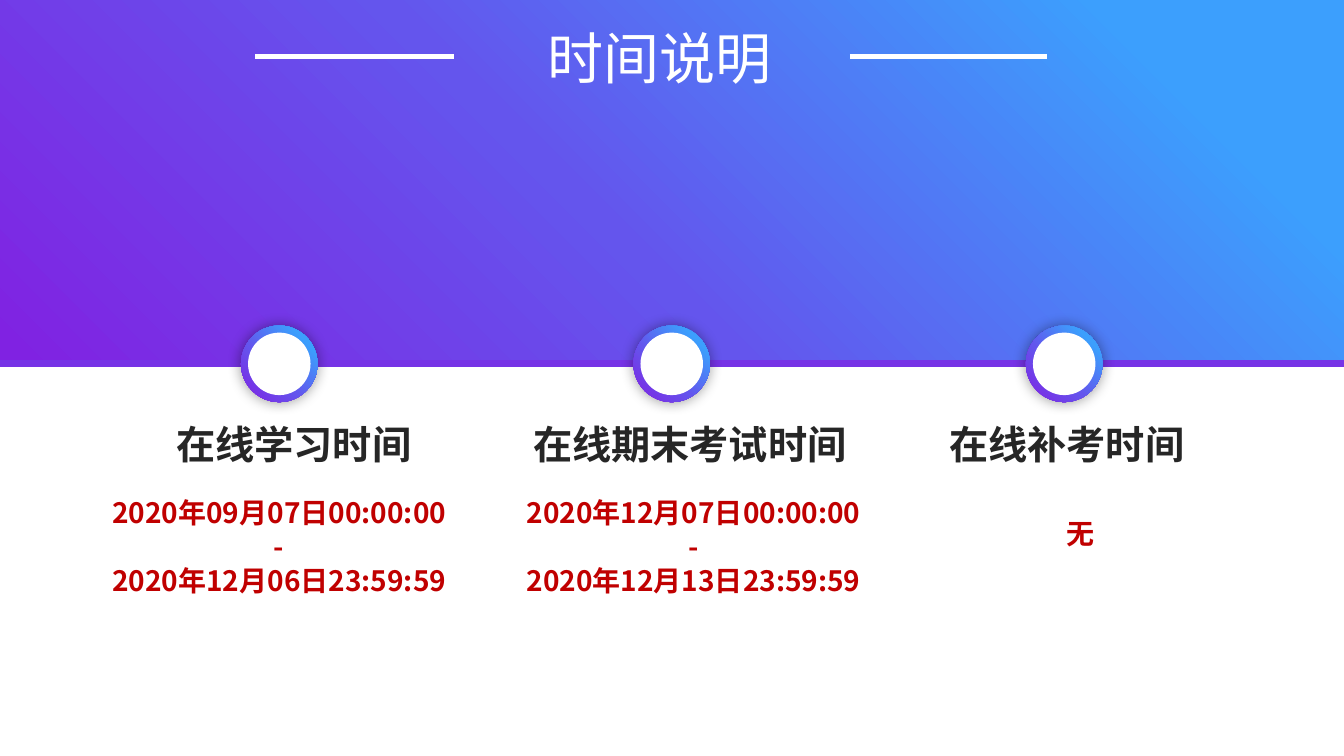
from copy import deepcopy

from lxml import etree
from pptx import Presentation
from pptx.dml.color import RGBColor
from pptx.enum.shapes import MSO_CONNECTOR, MSO_SHAPE
from pptx.enum.text import MSO_AUTO_SIZE, PP_ALIGN
from pptx.oxml.ns import qn
from pptx.util import Inches, Pt

RECTANGLE, OVAL = MSO_SHAPE.RECTANGLE, MSO_SHAPE.OVAL
STRAIGHT = MSO_CONNECTOR.STRAIGHT
GROW = MSO_AUTO_SIZE.SHAPE_TO_FIT_TEXT
LEFT, CENTER = PP_ALIGN.LEFT, PP_ALIGN.CENTER

WIDTH, HEIGHT = Inches(13.333), Inches(7.5)
FONT = "Noto Sans CJK SC"
WHITE, DARK, RED, PURPLE = "FFFFFF", "262626", "C00000", "7633E6"
GRADIENT = [(0.01, "8022E2"), (0.42, "6455ED"), (0.82, "3C9FFD")]
TIMELINE_Y = 48.13
FIRST_MARKER_X, MARKER_STEP = 20.78, 29.2
RING_SIZE, CORE_SIZE = 5.7, 4.65

PERIODS = [
    ("在线学习时间", 12.38, 19.35, 6.3, 64.93, 14.8,
     ["2020年09月07日00:00:00", "-", "2020年12月06日23:59:59"]),
    ("在线期末考试时间", 38.93, 25.35, 37.13, 64.93, 14.8,
     ["2020年12月07日00:00:00", "-", "2020年12月13日23:59:59"]),
    ("在线补考时间", 69.9, 20.93, 65.93, 67.73, 5.87, ["无"]),
]


def color(value):
    return RGBColor.from_string(value)


def across(percent):
    return round(WIDTH * percent / 100)


def down(percent):
    return round(HEIGHT * percent / 100)


def fill_gradient(shape):
    shape.fill.gradient()
    stop_list = shape._element.spPr.find(qn("a:gradFill")).find(qn("a:gsLst"))
    stop_list.append(deepcopy(stop_list[0]))
    for stop, (position, value) in zip(shape.fill.gradient_stops, GRADIENT):
        stop.position = position
        stop.color.rgb = color(value)
    shape.fill.gradient_angle = 45


def add_glow(shape):
    effects = shape._element.spPr.find(qn("a:effectLst"))
    shadow = etree.SubElement(effects, qn("a:outerShdw"),
                              blurRad=str(Pt(10)), dist="0", algn="ctr", rotWithShape="0")
    black = etree.SubElement(shadow, qn("a:srgbClr"), val="000000")
    etree.SubElement(black, qn("a:alpha"), val="40000")


def add_area(shapes, kind, left, top, width, height, solid=None):
    area = shapes.add_shape(kind, left, top, width, height)
    area.line.fill.background()
    area.shadow.inherit = False
    if solid:
        area.fill.solid()
        area.fill.fore_color.rgb = color(solid)
    else:
        fill_gradient(area)
    return area


def add_disc(shapes, x, size, solid=None):
    diameter = across(size)
    return add_area(shapes, OVAL, across(x) - diameter // 2,
                    down(TIMELINE_Y) - diameter // 2, diameter, diameter, solid)


def add_marker(slide, x):
    marker = slide.shapes.add_group_shape()
    add_glow(add_disc(marker.shapes, x, RING_SIZE))
    add_disc(marker.shapes, x, CORE_SIZE, WHITE)


def add_rule(slide, start, end, y, value, weight):
    rule = slide.shapes.add_connector(STRAIGHT, across(start), down(y), across(end), down(y))
    rule.line.color.rgb = color(value)
    rule.line.width = Pt(weight)
    etree.SubElement(rule._element.spPr, qn("a:effectLst"))


def add_text(slide, lines, x, y, width, height, size, value, bold=False, align=LEFT):
    box = slide.shapes.add_textbox(across(x), down(y), across(width), down(height))
    frame = box.text_frame
    frame.word_wrap = True
    frame.auto_size = GROW
    frame.text = "\n".join(lines)
    for paragraph in frame.paragraphs:
        paragraph.alignment = align
        font = paragraph.font
        font.name, font.size, font.bold = FONT, Pt(size), bold
        font.color.rgb = color(value)
        east_asian = etree.SubElement(font._element, qn("a:ea"))
        east_asian.set("typeface", FONT)


def main():
    deck = Presentation()
    deck.slide_width, deck.slide_height = WIDTH, HEIGHT
    slide = deck.slides.add_slide(deck.slide_layouts[6])

    add_area(slide.shapes, RECTANGLE, 0, down(-9.73), WIDTH, down(57.87))
    add_rule(slide, 0, 100, TIMELINE_Y, PURPLE, 5)
    for index in range(len(PERIODS)):
        add_marker(slide, FIRST_MARKER_X + index * MARKER_STEP)

    for heading, heading_x, heading_width, dates_x, dates_y, dates_height, dates in PERIODS:
        add_text(slide, [heading], heading_x, 54.93, heading_width, 7.6, 28, DARK, True)
        add_text(slide, dates, dates_x, dates_y, 28.95, dates_height, 20, RED, True, CENTER)

    add_text(slide, ["时间说明"], 40, 2.4, 20, 10.27, 40, WHITE)
    for start, end in [(63.23, 77.93), (18.98, 33.75)]:
        add_rule(slide, start, end, 7.47, WHITE, 3)

    deck.save("out.pptx")


if __name__ == "__main__":
    main()
